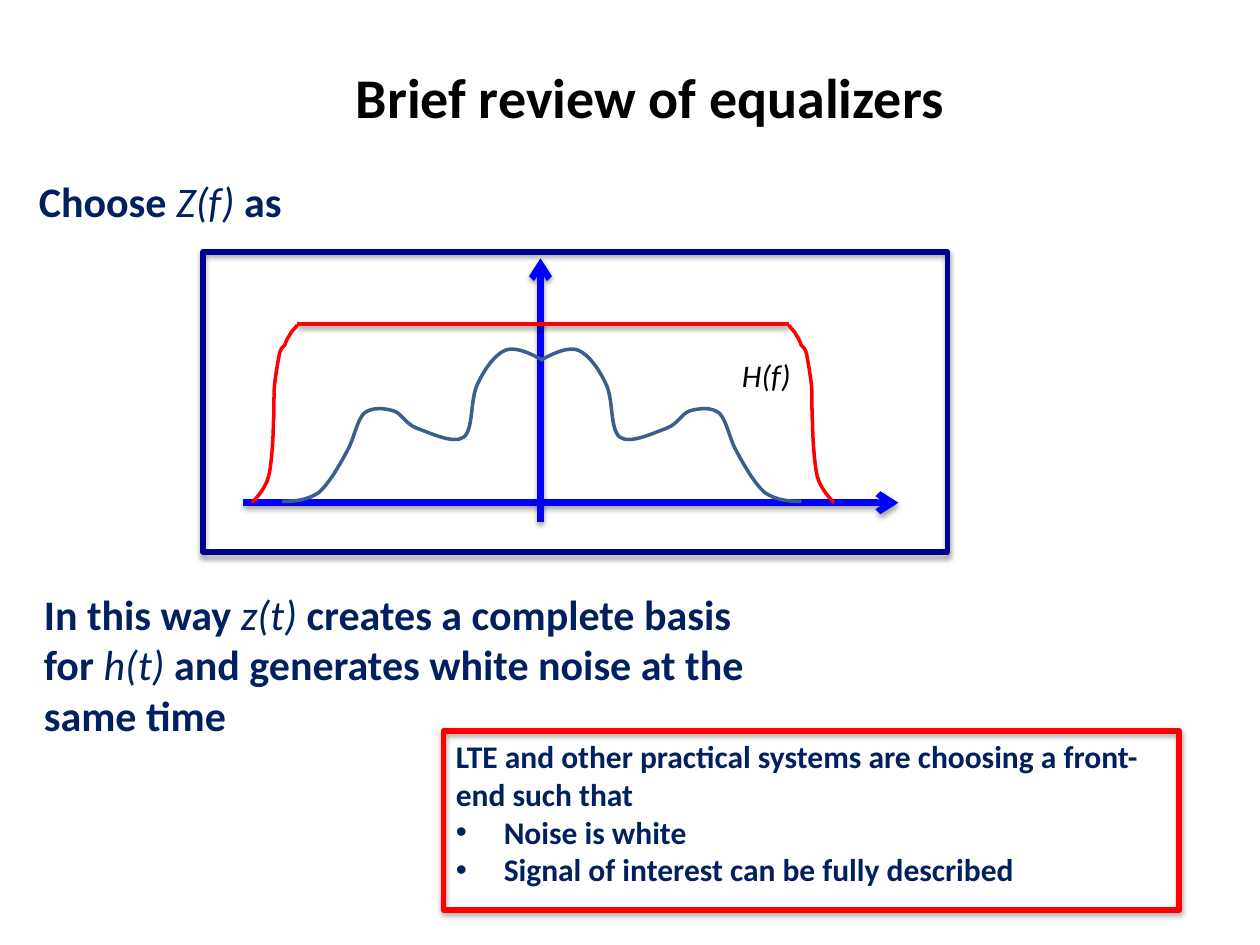
from lxml.etree import SubElement
from pptx import Presentation
from pptx.dml.color import RGBColor
from pptx.enum.shapes import MSO_CONNECTOR as Connector, MSO_SHAPE as Shape
from pptx.enum.text import MSO_ANCHOR as Anchor, PP_ALIGN as Align
from pptx.oxml.ns import qn
from pptx.util import Inches, Pt

NAVY, BLUE, RED, STEEL, BLACK = "002060", "0000FF", "FF0000", "3A5F8C", "000000"

CHANNEL = [
    (-0.01, 1.13),
    (0.10, 1.19), (0.21, 1.24), (0.29, 1.21),
    (0.38, 1.17), (0.46, 1.05), (0.51, 0.94),
    (0.57, 0.82), (0.54, 0.58), (0.62, 0.52),
    (0.70, 0.46), (0.90, 0.56), (0.99, 0.59),
    (1.09, 0.63), (1.11, 0.71), (1.18, 0.73),
    (1.25, 0.75), (1.35, 0.76), (1.41, 0.71),
    (1.47, 0.65), (1.49, 0.50), (1.55, 0.40),
    (1.61, 0.29), (1.69, 0.15), (1.77, 0.08),
    (1.86, 0.02), (1.96, 0.01), (2.06, 0.01),
]
FILTER_EDGE = [
    (1.95, 1.41),
    (1.97, 1.38), (2.00, 1.36), (2.01, 1.33),
    (2.03, 1.31), (2.05, 1.25), (2.05, 1.25),
    (2.07, 1.23), (2.07, 1.24), (2.09, 1.19),
    (2.10, 1.14), (2.12, 1.03), (2.13, 0.94),
    (2.14, 0.84), (2.13, 0.73), (2.14, 0.63),
    (2.14, 0.52), (2.15, 0.40), (2.16, 0.31),
    (2.17, 0.23), (2.18, 0.18), (2.21, 0.13),
    (2.24, 0.07), (2.31, 0.00), (2.31, 0.00),
]


def color(value):
    """Turn a hex string into a colour."""
    return RGBColor.from_string(value)


def set_line(shape, hex_color, width):
    """Set the colour and the width in points of an outline."""
    shape.line.color.rgb = color(hex_color)
    shape.line.width = Pt(width)


def add_shadow(shape, opacity):
    """Give a shape a soft shadow that falls straight down."""
    effects = SubElement(shape._element.spPr, qn("a:effectLst"))
    shadow = SubElement(effects, qn("a:outerShdw"), blurRad=str(Pt(3.1)),
                        dist=str(Pt(1.7)), dir="5400000", rotWithShape="0")
    black = SubElement(shadow, qn("a:srgbClr"), val=BLACK)
    SubElement(black, qn("a:alpha"), val=str(opacity * 1000))


def add_line(parent, start, end, hex_color, width, arrow=False):
    """Draw a shadowed straight line between two points in inches."""
    line = parent.shapes.add_connector(
        Connector.STRAIGHT, *(Inches(value) for value in (*start, *end)))
    set_line(line, hex_color, width)
    if arrow:
        SubElement(line.line._get_or_add_ln(), qn("a:tailEnd"), type="arrow")
    add_shadow(line, 38)


def add_frame(page, box, hex_color):
    """Draw an unfilled rectangle with a thick outline."""
    frame = page.shapes.add_shape(Shape.RECTANGLE, *map(Inches, box))
    frame.fill.background()
    set_line(frame, hex_color, 3.25)
    add_shadow(frame, 35)


def add_curve(parent, center, base, side, controls, hex_color):
    """Draw a Bezier curve on one side of the center, with heights above the base."""
    points = [(Inches(center + side * x), Inches(base - height)) for x, height in controls]
    builder = parent.shapes.build_freeform(*points[0])
    builder.add_line_segments(points[1:], close=False)
    curve = builder.convert_to_shape()
    outline = next(curve._element.iter(qn("a:path")))
    segments = outline.findall(qn("a:lnTo"))
    for first in range(0, len(segments), 3):
        bezier = SubElement(outline, qn("a:cubicBezTo"))
        for segment in segments[first:first + 3]:
            bezier.append(segment[0])
            outline.remove(segment)
    curve.fill.background()
    curve.shadow.inherit = False
    set_line(curve, hex_color, 2)


def add_text(page, box, paragraphs, size, hex_color=NAVY, wrap=True):
    """Write paragraphs of (text, is_symbol) runs: symbols italic, the rest bold."""
    frame = page.shapes.add_textbox(*map(Inches, box)).text_frame
    frame.word_wrap = wrap
    for index, runs in enumerate(paragraphs):
        para = frame.add_paragraph() if index else frame.paragraphs[0]
        para.font.name, para.font.size = "Calibri", Pt(size)
        para.font.color.rgb = color(hex_color)
        for text, is_symbol in runs:
            span = para.add_run()
            span.text = text
            span.font.bold, span.font.italic = not is_symbol, is_symbol
    return frame


def add_title(page, box, text):
    """Place and format the title placeholder."""
    title = page.shapes.title
    title.left, title.top, title.width, title.height = map(Inches, box)
    frame = title.text_frame
    frame.text = text
    frame.vertical_anchor = Anchor.MIDDLE
    para = frame.paragraphs[0]
    para.alignment = Align.CENTER
    para.font.name, para.font.size, para.font.bold = "Calibri", Pt(32), True
    para.font.color.rgb = color(BLACK)


def add_spectrum(page, box):
    """Draw the framed channel spectrum under its flat front-end filter."""
    left, top, width, height = box
    axis, center, base = left + 2.68, left + 2.7, top + 1.99
    add_line(page, (left + 0.32, base), (left + 5.52, base), BLUE, 3.75, arrow=True)
    add_line(page, (axis, top + 2.14), (axis, top + 0.05), BLUE, 3.75, arrow=True)
    for side in (1, -1):
        add_curve(page, center - 0.01, base, side, CHANNEL, STEEL)
    add_text(page, (left + 4.18, top + 0.78, 0.59, 0.4), [[("H(f)", True)]], 18, BLACK, wrap=False)
    add_frame(page, box, "000090")
    for side in (1, -1):
        half = page.shapes.add_group_shape()
        add_line(half, (axis, top + 0.57), (center + side * 1.95, top + 0.57), RED, 2.5)
        add_curve(half, center, base, side, FILTER_EDGE, RED)


def add_callout(page, box, heading, items):
    """Write a framed heading with bulleted items below it."""
    left, top, width, height = box
    frame = add_text(page, (left, top, width, height + 0.3),
                     [[(text, False)] for text in (heading, *items)], 18)
    for para in frame.paragraphs[1:]:
        properties = para._p.get_or_add_pPr()
        properties.set("marL", str(Inches(0.38)))
        properties.set("indent", str(Inches(-0.38)))
        bullet_font = properties.makeelement(qn("a:buFont"), {"typeface": "Arial"})
        bullet = properties.makeelement(qn("a:buChar"), {"char": "•"})
        properties.insert(0, bullet_font)
        properties.insert(1, bullet)
    add_frame(page, box, RED)


def main():
    """Build the equalizer slide and save it."""
    deck = Presentation()
    deck.slide_width, deck.slide_height = Inches(10), Inches(7.5)
    page = deck.slides.add_slide(deck.slide_layouts[5])
    add_title(page, (0.91, 0.3, 8.5, 0.93), "Brief review of equalizers")
    add_text(page, (0.21, 1.34, 5.84, 0.5),
             [[("Choose ", False), ("Z(f)", True), (" as", False)]], 24)
    add_spectrum(page, (1.61, 2, 5.91, 2.38))
    add_text(page, (0.25, 4.62, 5.84, 1.31),
             [[("In this way ", False), ("z(t) ", True),
               ("creates a complete basis for ", False), ("h(t) ", True),
               ("and generates white noise at the same time", False)]], 24)
    add_callout(page, (3.52, 5.8, 5.84, 1.42),
                "LTE and other practical systems are choosing a front-end such that",
                ["Noise is white", "Signal of interest can be fully described"])
    deck.save("out.pptx")


if __name__ == "__main__":
    main()
